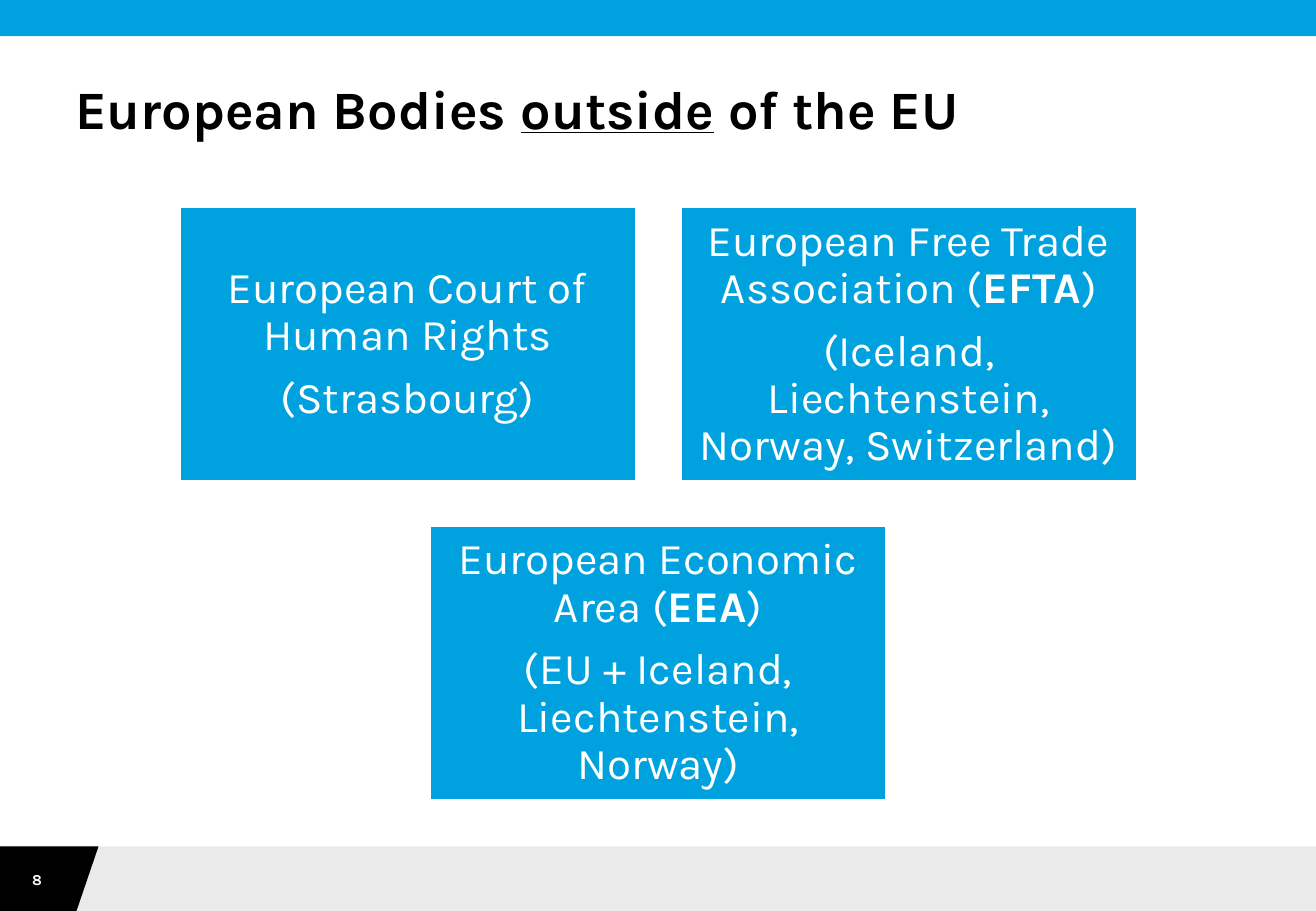
from pptx import Presentation
from pptx.dml.color import RGBColor
from pptx.enum import shapes as kinds, text as txt
from pptx.util import Cm, Pt

FONT = "Karla"
HUES = {"blue": "00A1DF", "grey": "EAEAEA", "black": "000000", "white": "FFFFFF"}
WIDE, HIGH = Cm(27.51), Cm(19.05)
TITLE = [("European Bodies ", False), ("outside", True), (" of the EU", False)]
ROWS = [
    [
        [[("European Court of Human Rights", False)], [("(Strasbourg)", False)]],
        [
            [("European Free Trade Association (", False), ("EFTA", True), (")", False)],
            [("(Iceland, Liechtenstein, Norway, Switzerland)", False)],
        ],
    ],
    [
        [
            [("European Economic Area (", False), ("EEA", True), (")", False)],
            [("(EU + Iceland, Liechtenstein, Norway)", False)],
        ],
    ],
]


def tint(name):
    return RGBColor.from_string(HUES[name])


def paint(shape, hue, edge=None):
    shape.shadow.inherit = False
    shape.fill.solid()
    shape.fill.fore_color.rgb = tint(hue)
    if edge:
        shape.line.color.rgb = tint(edge)
        shape.line.width = Pt(1)
    else:
        shape.line.fill.background()


def block(slide, box, hue, edge=None):
    shape = slide.shapes.add_shape(kinds.MSO_SHAPE.RECTANGLE, *box)
    paint(shape, hue, edge)
    return shape


def setup(frame, inset, anchor):
    frame.word_wrap = True
    frame.auto_size = txt.MSO_AUTO_SIZE.NONE
    frame.vertical_anchor = anchor
    frame.margin_left = frame.margin_right = inset
    frame.margin_top = frame.margin_bottom = inset


def style(para, size, hue, align):
    para.alignment = align
    para.font.name = FONT
    para.font.size = Pt(size)
    para.font.color.rgb = tint(hue)


def title(slide, box):
    head = slide.shapes.title
    head.left, head.top, head.width, head.height = box
    setup(head.text_frame, 0, txt.MSO_ANCHOR.TOP)
    para = head.text_frame.paragraphs[0]
    style(para, 32, "black", txt.PP_ALIGN.LEFT)
    para.font.bold = True
    para.line_spacing = 0.9
    for words, under in TITLE:
        run = para.add_run()
        run.text = words
        run.font.underline = under


def footer(slide, box):
    left, top, width, height = box
    block(slide, box, "grey")
    path = slide.shapes.build_freeform(left, top, scale=1.0)
    path.add_line_segments(
        [
            (left + Cm(2.06), top),
            (left + Cm(1.6), top + height),
            (left, top + height),
        ]
    )
    paint(path.convert_to_shape(), "black")
    label = slide.shapes.add_textbox(left, top + Cm(0.38), Cm(1.55), Cm(0.61))
    setup(label.text_frame, 0, txt.MSO_ANCHOR.MIDDLE)
    para = label.text_frame.paragraphs[0]
    para.text = "8"
    style(para, 9, "white", txt.PP_ALIGN.CENTER)
    para.font.bold = True


def card(slide, box, lines):
    frame = block(slide, box, "blue", "white").text_frame
    setup(frame, Cm(0.28), txt.MSO_ANCHOR.MIDDLE)
    for spot, parts in enumerate(lines):
        para = frame.add_paragraph() if spot else frame.paragraphs[0]
        style(para, 26, "white", txt.PP_ALIGN.CENTER)
        para.line_spacing = 0.9
        if spot:
            para.space_before = Pt(9)
        for words, bold in parts:
            run = para.add_run()
            run.text = words
            run.font.bold = bold


def cards(slide, box):
    left, top, width, height = box
    gap = Cm(0.95)
    wide = (width - gap) // 2
    high = (height - gap) // 2
    for level, row in enumerate(ROWS):
        span = len(row) * (wide + gap) - gap
        start = left + (width - span) // 2
        for spot, lines in enumerate(row):
            place = (start + spot * (wide + gap), top + level * (high + gap), wide, high)
            card(slide, place, lines)


def main():
    deck = Presentation()
    deck.slide_width, deck.slide_height = WIDE, HIGH
    slide = deck.slides.add_slide(deck.slide_layouts[5])
    footer(slide, (0, Cm(17.7), WIDE, Cm(1.35)))
    block(slide, (0, 0, WIDE, Cm(0.76)), "blue")
    cards(slide, (Cm(3.76), Cm(4.34), Cm(20), Cm(12.38)))
    title(slide, (Cm(1.57), Cm(1.73), Cm(24.4), Cm(1.2)))
    deck.save("out.pptx")


if __name__ == "__main__":
    main()
